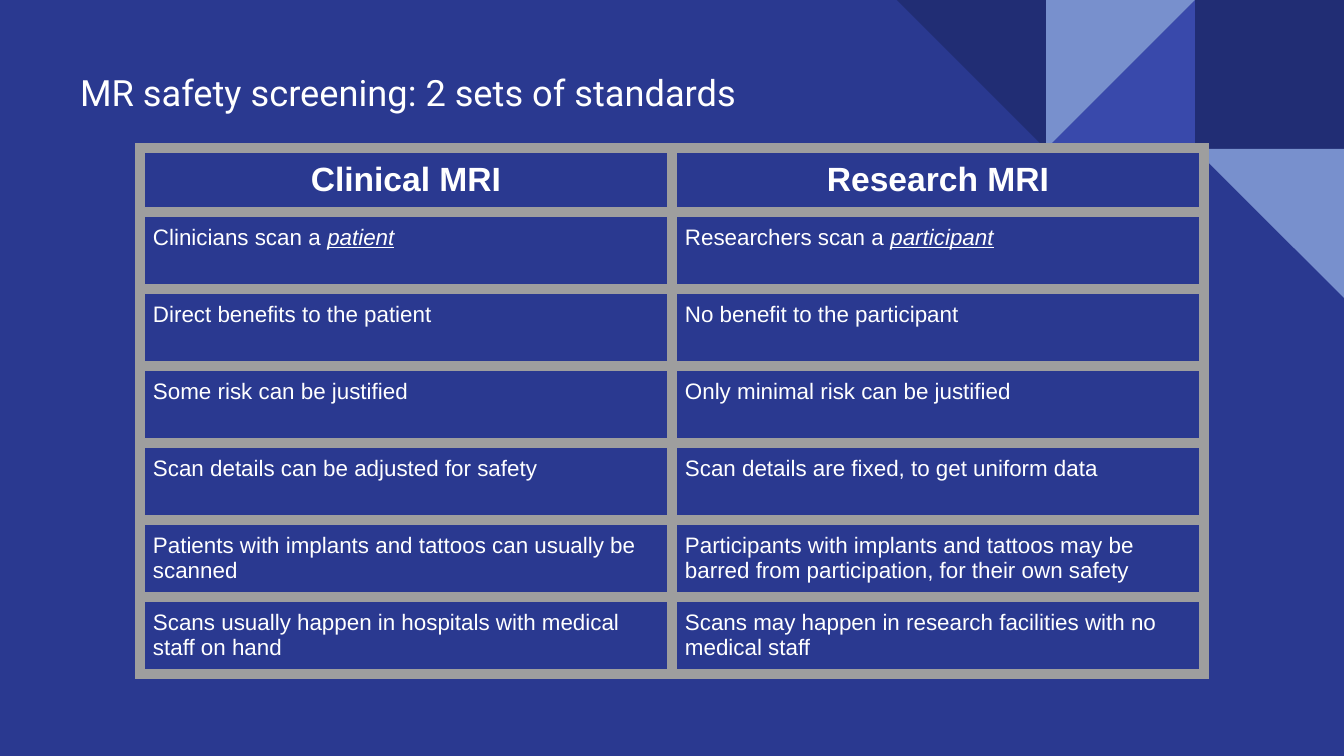
from lxml import etree
from pptx import Presentation
from pptx.dml.color import RGBColor
from pptx.enum.shapes import MSO_SHAPE
from pptx.enum.text import MSO_ANCHOR, MSO_AUTO_SIZE, PP_ALIGN
from pptx.oxml.ns import qn
from pptx.util import Emu, Pt

RECTANGLE = MSO_SHAPE.RECTANGLE
TRIANGLE = MSO_SHAPE.RIGHT_TRIANGLE
LEFT, CENTER = PP_ALIGN.LEFT, PP_ALIGN.CENTER
TOP = MSO_ANCHOR.TOP
NO_AUTOFIT = MSO_AUTO_SIZE.NONE

BACKGROUND = RGBColor(0x2A, 0x39, 0x90)
NAVY = RGBColor(0x21, 0x2D, 0x74)
INDIGO = RGBColor(0x39, 0x49, 0xAB)
LIGHT_BLUE = RGBColor(0x78, 0x90, 0xCD)
WHITE = RGBColor(0xFF, 0xFF, 0xFF)
GRAY = RGBColor(0x9E, 0x9E, 0x9E)

EMU_PER_PX = 914400 / 134.4
SLIDE_WIDTH, SLIDE_HEIGHT = 1344, 756
TILE = 149
INSET = 13
HEADER_HEIGHT, ROW_HEIGHT, COLUMN_WIDTH = 64, 77, 532
BORDER_WIDTH = Pt(6)

# Tiles: columns counted from the right edge, row, shape, rotation, colour
TILES = [
    (1, 0, RECTANGLE, 0, NAVY),
    (2, 0, TRIANGLE, 270, INDIGO),
    (2, 0, TRIANGLE, 90, LIGHT_BLUE),
    (3, 0, TRIANGLE, 180, NAVY),
    (1, 1, TRIANGLE, 180, LIGHT_BLUE),
]

HEADERS = ("Clinical MRI", "Research MRI")
# Each cell: plain text, then an optional emphasised ending
STANDARDS = [
    (("Clinicians scan a ", "patient"), ("Researchers scan a ", "participant")),
    (("Direct benefits to the patient",), ("No benefit to the participant",)),
    (("Some risk can be justified",), ("Only minimal risk can be justified",)),
    (("Scan details can be adjusted for safety",),
     ("Scan details are fixed, to get uniform data",)),
    (("Patients with implants and tattoos can usually be scanned",),
     ("Participants with implants and tattoos may be barred from participation, "
      "for their own safety",)),
    (("Scans usually happen in hospitals with medical staff on hand",),
     ("Scans may happen in research facilities with no medical staff",)),
]


def px(length):
    return Emu(round(length * EMU_PER_PX))


def set_font(font, name, size, bold=False):
    font.name, font.size, font.bold = name, Pt(size), bold
    font.color.rgb = WHITE


def set_margins(target):
    target.margin_left = target.margin_right = px(INSET)
    target.margin_top = target.margin_bottom = px(INSET)


def add_tile(slide, column, row, kind, rotation, color):
    shape = slide.shapes.add_shape(
        kind, px(SLIDE_WIDTH - column * TILE), px(row * TILE), px(TILE), px(TILE))
    shape.rotation = rotation
    shape.shadow.inherit = False
    shape.fill.solid()
    shape.fill.fore_color.rgb = color
    shape.line.fill.background()


def fill_title(slide, text):
    title = slide.shapes.title
    title.left, title.top, title.width, title.height = map(px, (67, 66, 1208, 63))
    frame = title.text_frame
    frame.text = text
    frame.word_wrap = True
    frame.auto_size = NO_AUTOFIT
    frame.vertical_anchor = TOP
    set_margins(frame)
    paragraph = frame.paragraphs[0]
    paragraph.alignment = LEFT
    paragraph.line_spacing = 0.8
    set_font(paragraph.font, "Roboto", 19.4)


def add_borders(cell):
    properties = cell._tc.get_or_add_tcPr()
    for side in ("a:lnL", "a:lnR", "a:lnT", "a:lnB"):
        line = etree.SubElement(properties, qn(side), w=str(BORDER_WIDTH))
        fill = etree.SubElement(line, qn("a:solidFill"))
        etree.SubElement(fill, qn("a:srgbClr"), val=str(GRAY))


def fill_cell(cell, parts, size, bold=False, alignment=LEFT):
    add_borders(cell)
    cell.fill.background()
    cell.vertical_anchor = TOP
    set_margins(cell)
    paragraph = cell.text_frame.paragraphs[0]
    paragraph.alignment = alignment
    set_font(paragraph.font, "Arial", size, bold)
    for index, part in enumerate(parts):
        run = paragraph.add_run()
        run.text = part
        set_font(run.font, "Arial", size, bold)
        if index:
            run.font.italic = run.font.underline = True


def add_standards_table(slide):
    row_count = len(STANDARDS) + 1
    table = slide.shapes.add_table(
        row_count, len(HEADERS), px(140), px(148), px(len(HEADERS) * COLUMN_WIDTH),
        px(HEADER_HEIGHT + len(STANDARDS) * ROW_HEIGHT)).table
    table.first_row = table.horz_banding = False
    for column in table.columns:
        column.width = px(COLUMN_WIDTH)
    for index, row in enumerate(table.rows):
        row.height = px(ROW_HEIGHT if index else HEADER_HEIGHT)
    for column, header in enumerate(HEADERS):
        fill_cell(table.cell(0, column), (header,), 18, True, CENTER)
    for row, standards in enumerate(STANDARDS, 1):
        for column, parts in enumerate(standards):
            fill_cell(table.cell(row, column), parts, 12)


def main():
    presentation = Presentation()
    presentation.slide_width = px(SLIDE_WIDTH)
    presentation.slide_height = px(SLIDE_HEIGHT)
    slide = presentation.slides.add_slide(presentation.slide_layouts[5])
    slide.background.fill.solid()
    slide.background.fill.fore_color.rgb = BACKGROUND
    for tile in TILES:
        add_tile(slide, *tile)
    fill_title(slide, "MR safety screening: 2 sets of standards")
    add_standards_table(slide)
    presentation.save("out.pptx")


if __name__ == "__main__":
    main()
